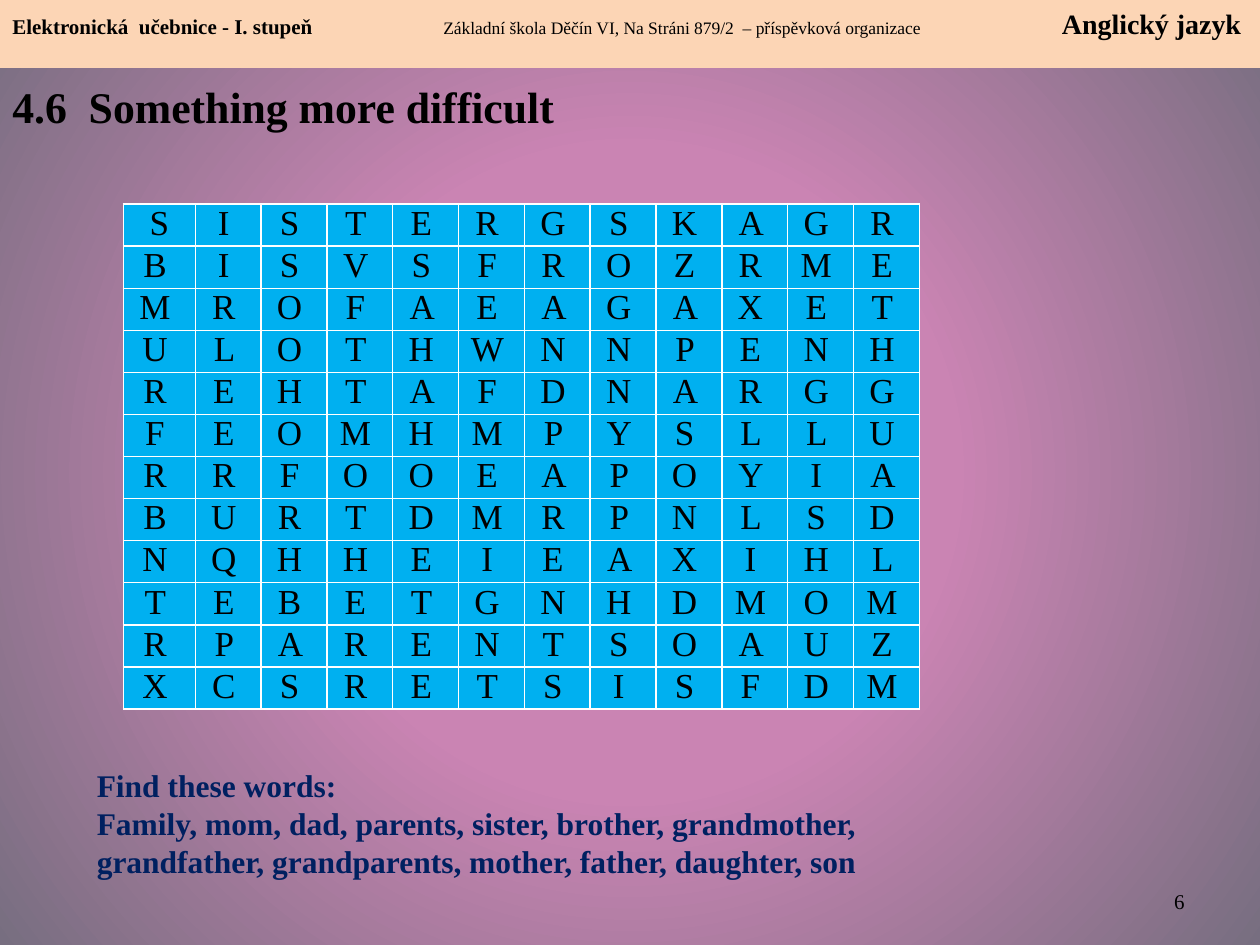
import pptx
import pptx.dml.color
import pptx.enum.shapes
import pptx.enum.text
import pptx.oxml
import pptx.oxml.ns
import pptx.util
import lxml.etree

Inches = pptx.util.Inches
RGBColor = pptx.dml.color.RGBColor
ALIGN = pptx.enum.text.PP_ALIGN
ANCHOR = pptx.enum.text.MSO_ANCHOR

FONT = "Times New Roman"
BLACK = RGBColor(0x00, 0x00, 0x00)
NAVY = RGBColor(0x00, 0x20, 0x60)
PEACH = RGBColor(0xFC, 0xD5, 0xB5)
CELL_BLUE = RGBColor(0x00, 0xB0, 0xF0)
WHITE = RGBColor(0xFF, 0xFF, 0xFF)
PINK = RGBColor(0xCA, 0x84, 0xB3)
GREY = RGBColor(0x77, 0x6E, 0x80)

LETTERS = [
    "SISTERGSKAGR",
    "BISVSFROZRME",
    "MROFAEAGAXET",
    "ULOTHWNNPENH",
    "REHTAFDNARGG",
    "FEOMHMPYSLLU",
    "RRFOOEAPOYIA",
    "BURTDMRPNLSD",
    "NQHHEIEAXIHL",
    "TEBETGNHDMOM",
    "RPARENTSOAUZ",
    "XCSRETSISFDM",
]


def add_run(paragraph, text, size=12, color=BLACK, bold=False):
    run = paragraph.add_run()
    run.text = text
    run.font.name = FONT
    run.font.size = pptx.util.Pt(size)
    run.font.bold = bold
    run.font.color.rgb = color


def add_text(slide, box, lines, align=ALIGN.LEFT, anchor=ANCHOR.TOP, **run_format):
    frame = slide.shapes.add_textbox(*map(Inches, box)).text_frame
    frame.word_wrap = True
    frame.vertical_anchor = anchor
    for index, line in enumerate(lines):
        paragraph = frame.add_paragraph() if index else frame.paragraphs[0]
        paragraph.alignment = align
        add_run(paragraph, line, **run_format)


def set_background(slide):
    """Radial gradient from the centre of the slide."""
    fill = slide.background.fill
    fill.gradient()
    for stop, position, color in zip(fill.gradient_stops, (0.41, 1), (PINK, GREY)):
        stop.position = position
        stop.color.rgb = color
    qn = pptx.oxml.ns.qn
    gradient = slide.element.find(".//" + qn("a:gradFill"))
    linear = gradient.find(qn("a:lin"))
    circle = lxml.etree.Element(qn("a:path"), path="circle")
    lxml.etree.SubElement(circle, qn("a:fillToRect"),
                          l="50000", t="50000", r="50000", b="50000")
    gradient.replace(linear, circle)


def add_header(slide, box):
    """Full-width band with three labels on tab stops."""
    band = slide.shapes.add_shape(
        pptx.enum.shapes.MSO_SHAPE.RECTANGLE, *map(Inches, box))
    band.shadow.inherit = False
    band.fill.solid()
    band.fill.fore_color.rgb = PEACH
    band.line.fill.background()
    band.text_frame.word_wrap = True
    band.text_frame.vertical_anchor = ANCHOR.TOP
    paragraph = band.text_frame.paragraphs[0]
    paragraph.alignment = ALIGN.LEFT
    tabs = pptx.oxml.ns.qn("a:tabLst")
    tab_list = lxml.etree.SubElement(paragraph._p.get_or_add_pPr(), tabs)
    for position in (3.42, 8.33):
        lxml.etree.SubElement(tab_list, pptx.oxml.ns.qn("a:tab"),
                              pos=str(Inches(position)), algn="l")
    add_run(paragraph, "Elektronická  učebnice - I. stupeň\t", size=12, bold=True)
    add_run(paragraph,
            "Základní škola Děčín VI, Na Stráni 879/2  – příspěvková organizace\t",
            size=10)
    add_run(paragraph, "Anglický jazyk", size=16, bold=True)


def set_borders(cell):
    properties = cell._tc.get_or_add_tcPr()
    for index, side in enumerate(("lnL", "lnR", "lnT", "lnB")):
        properties.insert(index, pptx.oxml.parse_xml(
            f'<a:{side} {pptx.oxml.ns.nsdecls("a")} w="12700"><a:solidFill>'
            f'<a:srgbClr val="{WHITE}"/></a:solidFill></a:{side}>'))


def add_letter_grid(slide, box, first_column=0.57):
    """Word search table: a slightly wider first column, the rest equal."""
    left, top, width, height = box
    rows, columns = len(LETTERS), len(LETTERS[0])
    table = slide.shapes.add_table(rows, columns, *map(Inches, box)).table
    table.first_row = False
    table.horz_banding = False
    for row in table.rows:
        row.height = Inches(height / rows)
    for index, column in enumerate(table.columns):
        column.width = Inches(
            (width - first_column) / (columns - 1) if index else first_column)
    for row_index, word in enumerate(LETTERS):
        for column_index, letter in enumerate(word):
            cell = table.cell(row_index, column_index)
            cell.fill.solid()
            cell.fill.fore_color.rgb = CELL_BLUE
            cell.margin_left = cell.margin_right = Inches(0.07)
            cell.margin_top = cell.margin_bottom = 0
            set_borders(cell)
            paragraph = cell.text_frame.paragraphs[0]
            paragraph.alignment = ALIGN.CENTER
            # The first letter has a space on both sides, the others after only
            lead = "" if row_index or column_index else " "
            add_run(paragraph, f"{lead}{letter} ", size=20)


def main():
    presentation = pptx.Presentation()
    presentation.slide_width = Inches(10)
    presentation.slide_height = Inches(7.5)
    slide = presentation.slides.add_slide(presentation.slide_layouts[6])

    set_background(slide)
    # Title and page number
    add_text(slide, (0, 0.55, 9, 0.58), ["4.6  Something more difficult"],
             anchor=ANCHOR.MIDDLE, size=25, bold=True)
    add_text(slide, (7.17, 6.95, 2.33, 0.4), ["6"],
             align=ALIGN.RIGHT, anchor=ANCHOR.MIDDLE, size=12)
    add_header(slide, (0, 0, 10, 0.54))
    add_letter_grid(slide, (0.98, 1.62, 6.32, 4))
    # Task
    add_text(slide, (0.67, 6.03, 7.56, 1.01), [
        "Find these words:",
        "Family, mom, dad, parents, sister, brother, grandmother, "
        "grandfather, grandparents, mother, father, daughter, son",
    ], size=18, color=NAVY, bold=True)

    presentation.save("out.pptx")


if __name__ == "__main__":
    main()
